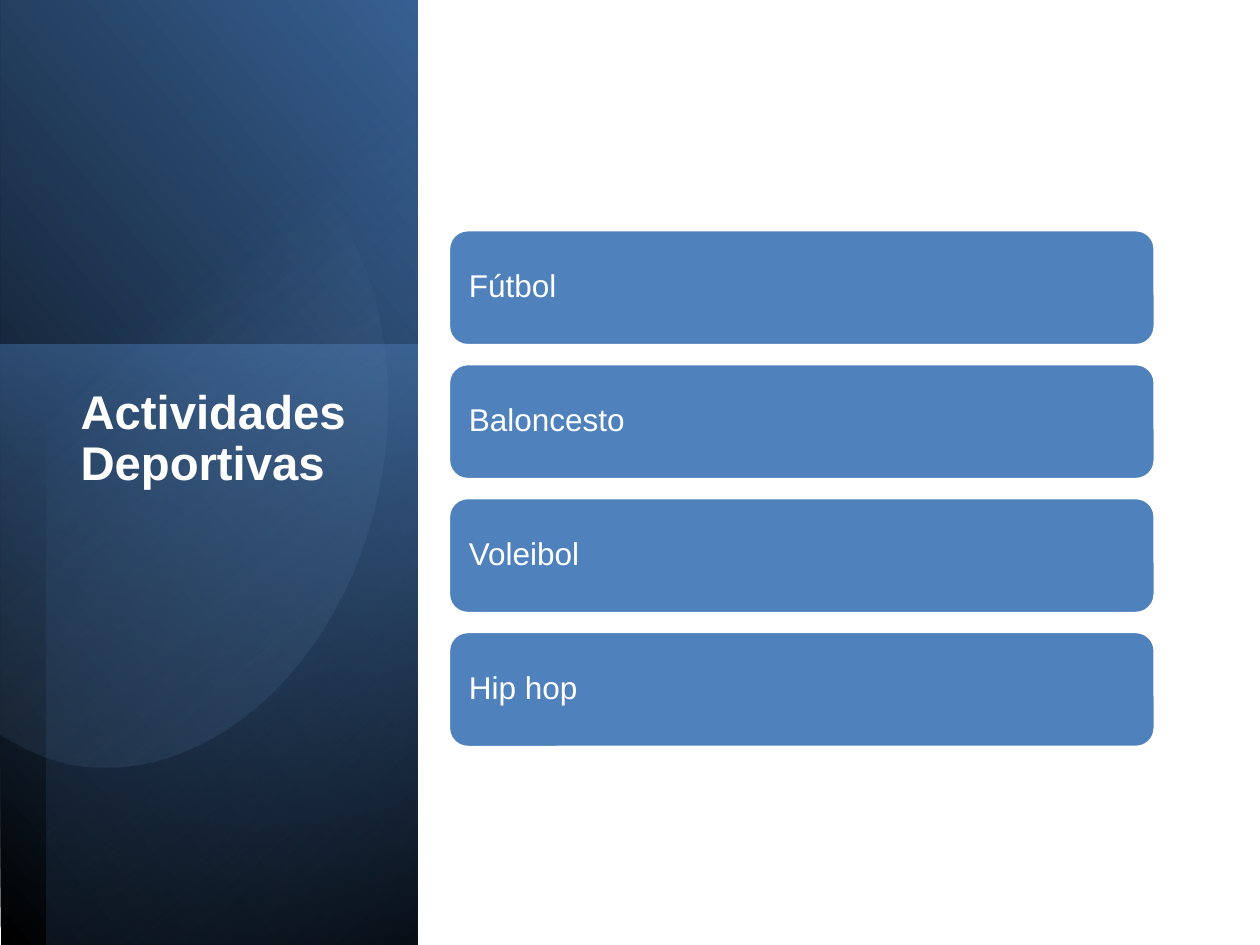
from math import cos, radians, sin

from lxml.etree import SubElement
from pptx import Presentation
from pptx.dml.color import RGBColor
from pptx.enum.shapes import MSO_SHAPE as Shape
from pptx.enum.text import MSO_ANCHOR as Anchor, MSO_AUTO_SIZE as Fit, PP_ALIGN as Align
from pptx.oxml.ns import qn
from pptx.util import Cm, Pt

BLACK = RGBColor(0x00, 0x00, 0x00)
WHITE = RGBColor(0xFF, 0xFF, 0xFF)
BLUE = RGBColor(0x4F, 0x81, 0xBD)
DEEP = RGBColor(0x37, 0x60, 0x92)
NAVY = RGBColor(0x25, 0x40, 0x61)
PALE = RGBColor(0x95, 0xB3, 0xD7)

FONT = "Arial"
SPORTS = ["Fútbol", "Baloncesto", "Voleibol", "Hip hop"]

# Box, turn, flip, stops (place %, colour, opacity %), clockwise angle
PANELS = [
    ((-5.33, 5.33, 19.1, 8.41), 90, True, [(0, BLACK, 100), (100, DEEP, 100)], 310),
    ((-1.83, 8.79, 12.09, 8.41), 270, False, [(0, BLUE, 50), (100, NAVY, 0)], 190),
    ((-4.85, 5.79, 19.05, 7.47), 270, True, [(0, BLACK, 59), (69, BLUE, 0)], 220),
]

# Arc outline in cm: a start, then three points for each curve
ARC = [
    (0.64, 3.18),
    (1.37, 2.64), (2.21, 2.31), (3.05, 2.26),
    (3.38, 2.24), (3.73, 2.26), (4.06, 2.31),
    (6.78, 2.87), (8.36, 6.27), (7.62, 9.88),
    (6.88, 13.49), (4.09, 15.95), (1.37, 15.42),
    (0.86, 15.29), (0.41, 15.09), (-0.03, 14.81),
]
CORNERS = [(-0.3, 14.58), (0.23, 3.51)]
ARC_MID = (3.45, 9)
ARC_TURN = 101.6
ARC_STOPS = [(39, PALE, 0), (100, DEEP, 26)]


def shade(shape, stops, angle):
    """Fill a shape with a two-stop gradient and no outline."""
    fill = shape.fill
    fill.gradient()
    fill.gradient_angle = 360 - angle
    for stop, (place, color, _) in zip(fill.gradient_stops, stops):
        stop.position = place / 100
        stop.color.rgb = color
    tones = shape._element.spPr.iter(qn("a:srgbClr"))
    for tone, (_, _, alpha) in zip(list(tones), stops):
        SubElement(tone, qn("a:alpha"), val=str(alpha * 1000))
    shape.line.fill.background()
    shape.shadow.inherit = False


def add_panel(slide, box, turn, flip, stops, angle):
    panel = slide.shapes.add_shape(Shape.RECTANGLE, *map(Cm, box))
    panel.rotation = turn
    if flip:
        panel._element.spPr.xfrm.set("flipH", "1")
    shade(panel, stops, angle)


def curve(points, steps=24):
    """Sample a chain of cubic curves."""
    out = [points[0]]
    for i in range(0, len(points) - 1, 3):
        a, b, c, d = points[i:i + 4]
        for n in range(1, steps + 1):
            t = n / steps
            u = 1 - t
            out.append(tuple(
                u**3 * p + 3 * u * u * t * q + 3 * u * t * t * r + t**3 * s
                for p, q, r, s in zip(a, b, c, d)))
    return out


def unturn(point):
    """Turn a point back, so that the shape's rotation sets it upright."""
    x, y = point[0] - ARC_MID[0], point[1] - ARC_MID[1]
    c, s = cos(radians(ARC_TURN)), sin(radians(ARC_TURN))
    return Cm(ARC_MID[0] + x * c + y * s), Cm(ARC_MID[1] - x * s + y * c)


def add_arc(slide):
    points = [unturn(p) for p in curve(ARC) + CORNERS]
    pen = slide.shapes.build_freeform(*points[0])
    pen.add_line_segments(points[1:], close=True)
    arc = pen.convert_to_shape()
    arc.rotation = ARC_TURN
    shade(arc, ARC_STOPS, 310)


def set_text(shape, text, size, anchor, bold=False):
    frame = shape.text_frame
    frame.text = text
    frame.word_wrap = True
    frame.auto_size = Fit.NONE
    frame.vertical_anchor = anchor
    para = frame.paragraphs[0]
    para.alignment = Align.LEFT
    para.line_spacing = 0.9
    font = para.runs[0].font
    font.name, font.size, font.bold = FONT, Pt(size), bold
    font.color.rgb = WHITE


def set_title(slide):
    title = slide.shapes.title
    title.left, title.top = Cm(1.37), Cm(7.7)
    title.width, title.height = Cm(6), Cm(8.53)
    set_text(title, "Actividades Deportivas", 27, Anchor.TOP, bold=True)
    # Bring the title in front of the panels
    title._element.getparent().append(title._element)


def add_card(slide, top, text):
    card = slide.shapes.add_shape(
        Shape.ROUNDED_RECTANGLE, Cm(9.04), Cm(top), Cm(14.25), Cm(2.34))
    card.shadow.inherit = False
    card.fill.solid()
    card.fill.fore_color.rgb = BLUE
    card.line.color.rgb = WHITE
    card.line.width = Pt(2)
    set_text(card, text, 18, Anchor.MIDDLE)
    card.text_frame.margin_left = card.text_frame.margin_right = Cm(0.3)


def main():
    deck = Presentation()
    deck.slide_width, deck.slide_height = Cm(25.4), Cm(19.05)
    slide = deck.slides.add_slide(deck.slide_layouts[5])

    # Shaded side band
    for panel in PANELS:
        add_panel(slide, *panel)
    add_arc(slide)
    set_title(slide)

    # List of sports
    for i, sport in enumerate(SPORTS):
        add_card(slide, 4.63 + 2.7 * i, sport)

    deck.save("out.pptx")


if __name__ == "__main__":
    main()
